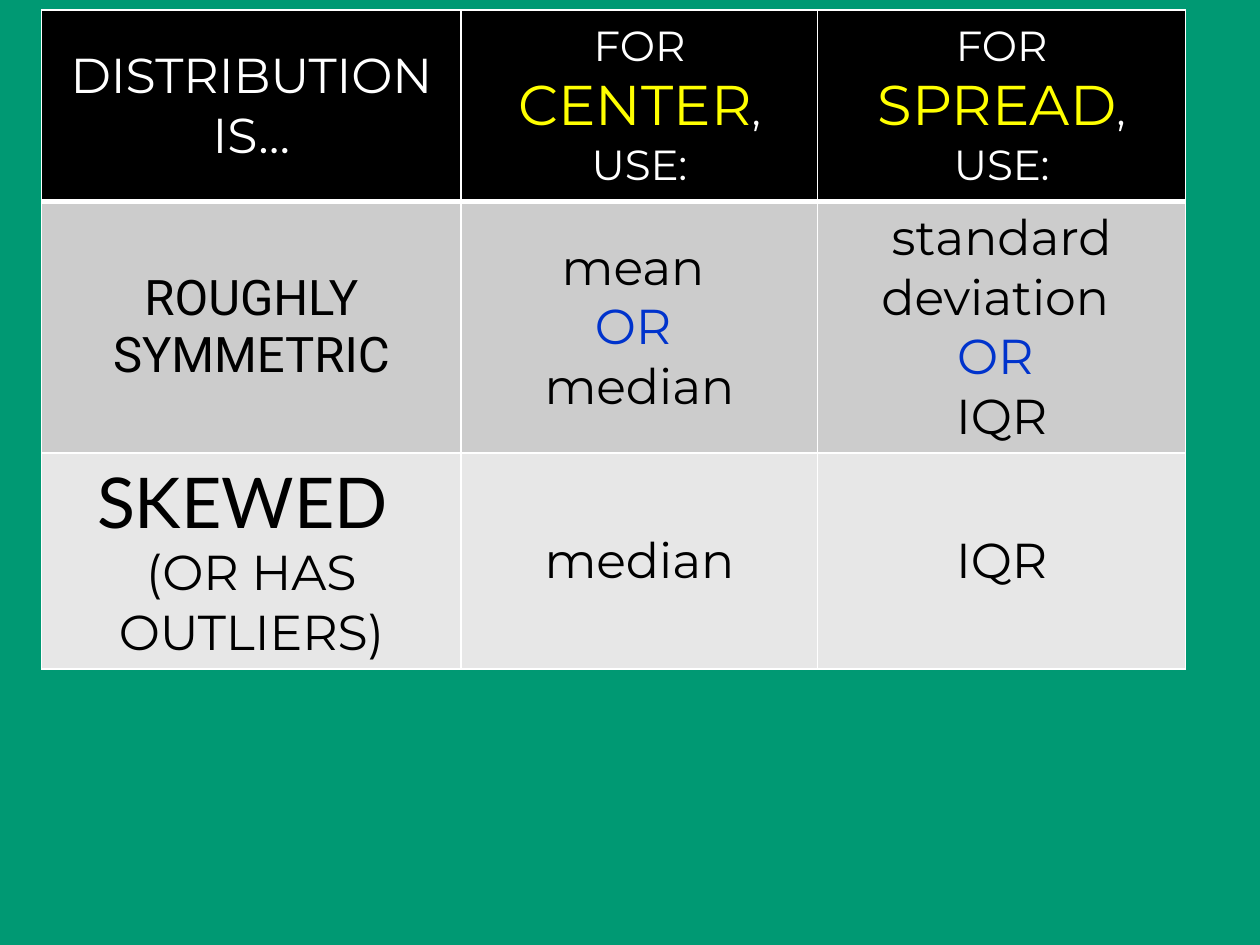
from pptx import Presentation
from pptx.dml.color import RGBColor
from pptx.enum.text import MSO_ANCHOR, PP_ALIGN
from pptx.oxml.ns import qn
from pptx.util import Inches, Pt
from lxml.etree import SubElement

COLORS = {
    "background": "009973",
    "header": "000000",
    "symmetric": "CCCCCC",
    "skewed": "E7E7E7",
    "border": "FFFFFF",
    "white": "FFFFFF",
    "black": "000000",
    "yellow": "FFFF00",
    "blue": "0033CC",
}
COLUMN_WIDTHS = [3.33, 2.83, 2.92]
ROW_HEIGHTS = [1.52, 1.87, 1.61]
ROW_FILLS = ["header", "symmetric", "skewed"]
LINE_BREAK = "\n"


def run(text, size=28, color="black", font="Montserrat"):
    return text, size, color, font


def measure_heading(measure):
    return [[run("FOR ", 24, "white"), run(measure, 32, "yellow"),
             run(", USE:", 24, "white")]]


def either(first, second):
    return [[run(first)], [run("OR ", color="blue")], [run(second)]]


# Each cell is a list of paragraphs, each paragraph a list of runs.
CELLS = [
    [[[run("DISTRIBUTION IS…", color="white")]],
     measure_heading("CENTER"),
     measure_heading("SPREAD")],
    [[[run("ROUGHLY SYMMETRIC", font="Roboto")]],
     either("mean ", "median"),
     either("standard deviation ", "IQR")],
    [[[run("SKEWED ", 40, font="Lato"), LINE_BREAK, run("(OR HAS OUTLIERS)")]],
     [[run("median")]],
     [[run("IQR")]]],
]


def rgb(name):
    return RGBColor.from_string(COLORS[name])


def set_borders(cell, widths):
    """Draw the left, right, top and bottom borders, with widths in points."""
    properties = cell._tc.get_or_add_tcPr()
    for side, width in zip("LRTB", widths):
        line = SubElement(properties, qn(f"a:ln{side}"), w=str(Pt(width)))
        fill = SubElement(line, qn("a:solidFill"))
        SubElement(fill, qn("a:srgbClr"), val=COLORS["border"])


def write_cell(cell, paragraphs):
    cell.vertical_anchor = MSO_ANCHOR.MIDDLE
    frame = cell.text_frame
    for index, runs in enumerate(paragraphs):
        paragraph = frame.add_paragraph() if index else frame.paragraphs[0]
        paragraph.alignment = PP_ALIGN.CENTER
        for item in runs:
            if item == LINE_BREAK:
                paragraph.add_line_break()
                continue
            text, size, color, font = item
            text_run = paragraph.add_run()
            text_run.text = text
            text_run.font.size = Pt(size)
            text_run.font.name = font
            text_run.font.bold = False
            text_run.font.color.rgb = rgb(color)


def add_measures_table(slide, left, top, width, height):
    """Place the table, sharing the box out by the column and row proportions."""
    table = slide.shapes.add_table(
        len(ROW_HEIGHTS), len(COLUMN_WIDTHS),
        Inches(left), Inches(top), Inches(width), Inches(height)).table
    for column, share in zip(table.columns, COLUMN_WIDTHS):
        column.width = Inches(width * share / sum(COLUMN_WIDTHS))
    for row, share in zip(table.rows, ROW_HEIGHTS):
        row.height = Inches(height * share / sum(ROW_HEIGHTS))
    for row_index, (row, fill) in enumerate(zip(CELLS, ROW_FILLS)):
        top_width = 3 if row_index == 1 else 1
        bottom_width = 3 if row_index == 0 else 1
        for column_index, paragraphs in enumerate(row):
            cell = table.cell(row_index, column_index)
            set_borders(cell, (1, 1, top_width, bottom_width))
            cell.fill.solid()
            cell.fill.fore_color.rgb = rgb(fill)
            write_cell(cell, paragraphs)


def main():
    presentation = Presentation()
    presentation.slide_width = Inches(10)
    presentation.slide_height = Inches(7.5)
    slide = presentation.slides.add_slide(presentation.slide_layouts[6])
    slide.background.fill.solid()
    slide.background.fill.fore_color.rgb = rgb("background")
    add_measures_table(slide, 0.33, 0.08, sum(COLUMN_WIDTHS), sum(ROW_HEIGHTS))
    presentation.save("out.pptx")


if __name__ == "__main__":
    main()
